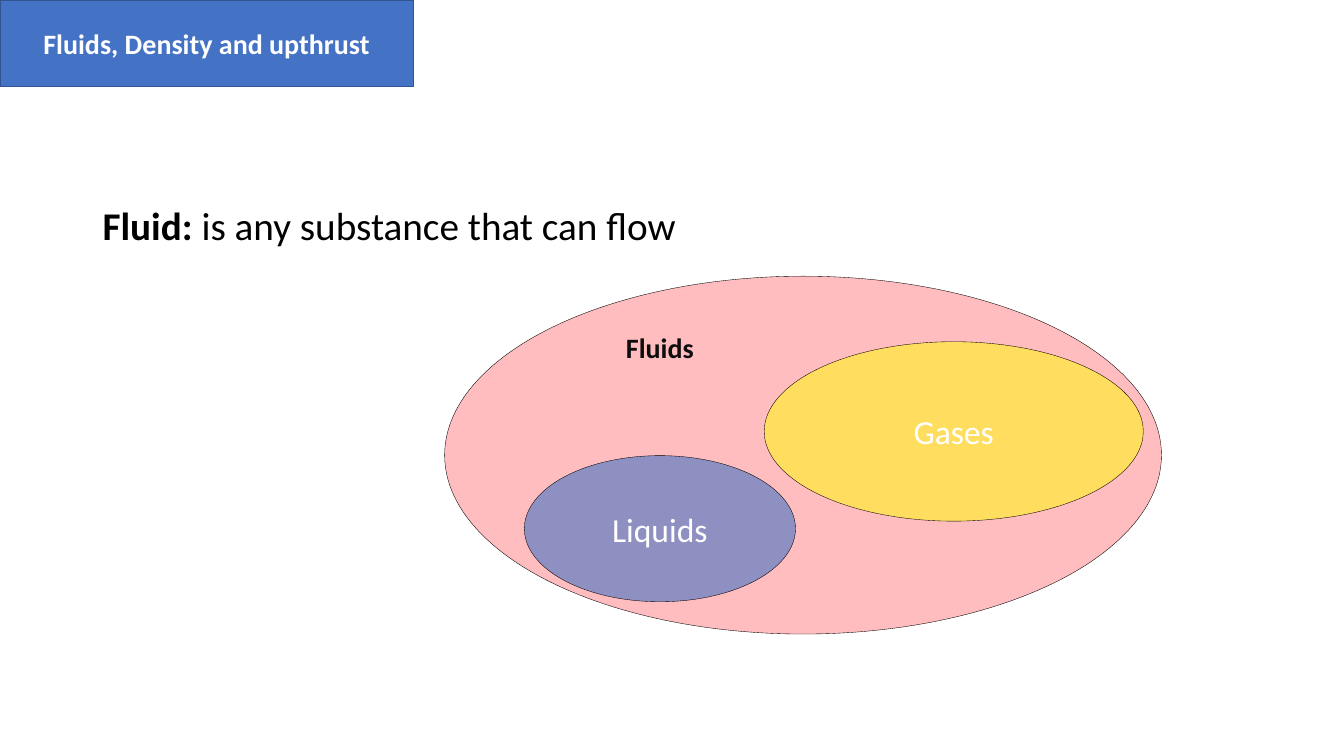
from dataclasses import dataclass

from lxml import etree
from pptx import Presentation
from pptx.dml.color import RGBColor
from pptx.enum.shapes import MSO_SHAPE
from pptx.enum.text import MSO_ANCHOR, MSO_AUTO_SIZE, PP_ALIGN
from pptx.oxml.ns import qn
from pptx.util import Inches, Pt

ELLIPSE = MSO_SHAPE.OVAL
CENTER, LEFT = PP_ALIGN.CENTER, PP_ALIGN.LEFT
MIDDLE, TOP = MSO_ANCHOR.MIDDLE, MSO_ANCHOR.TOP
NO_AUTOFIT = MSO_AUTO_SIZE.NONE
TITLE_ONLY = 5


@dataclass(frozen=True)
class Theme:
    font: str = "Calibri"
    blue: str = "4472C4"
    banner_edge: str = "325491"
    pink: str = "FF7C80"
    yellow: str = "FFFF00"
    black: str = "000000"
    near_black: str = "0D0D0D"
    white: str = "FFFFFF"
    definition_size: int = 28
    member_size: int = 24
    heading_size: int = 20


THEME = Theme()


def rgb(code):
    return RGBColor.from_string(code)


def place(shape, box):
    for side, length in zip(("left", "top", "width", "height"), box):
        setattr(shape, side, Inches(length))


def paint(shape, fill, edge, edge_width, opacity=100):
    """Fill and outline a shape; opacity is a percentage."""
    shape.fill.solid()
    shape.fill.fore_color.rgb = rgb(fill)
    if opacity < 100:
        color = shape.fill._xPr.find(qn("a:solidFill"))[0]
        etree.SubElement(color, qn("a:alpha"), val=str(opacity * 1000))
    shape.line.color.rgb = rgb(edge)
    shape.line.width = Pt(edge_width)


def write(shape, runs, size, color, align=LEFT, anchor=TOP):
    """Write one paragraph of (text, bold) runs and return it."""
    frame = shape.text_frame
    frame_format = {"word_wrap": True, "auto_size": NO_AUTOFIT, "vertical_anchor": anchor}
    for name, value in frame_format.items():
        setattr(frame, name, value)
    paragraph = frame.paragraphs[0]
    paragraph.alignment = align
    for text, bold in runs:
        run = paragraph.add_run()
        run.text = text
        for name, value in {"name": THEME.font, "size": Pt(size), "bold": bold}.items():
            setattr(run.font, name, value)
        run.font.color.rgb = rgb(color)
    return paragraph


def add_banner(slide, box):
    banner = slide.shapes.title
    place(banner, box)
    paint(banner, THEME.blue, THEME.banner_edge, 1)
    write(banner, [("Fluids, Density and upthrust", True)],
          THEME.heading_size, THEME.white, CENTER, MIDDLE)


def add_definition(slide, box):
    definition = slide.shapes.add_textbox(*map(Inches, box))
    sentence = write(definition,
                     [("Fluid: ", True), ("is any substance that can flow", False)],
                     THEME.definition_size, THEME.black)
    sentence.line_spacing = 0.9
    sentence.space_before = Pt(10)


def add_set(slide, box, fill, opacity):
    ellipse = slide.shapes.add_shape(ELLIPSE, *map(Inches, box))
    ellipse.shadow.inherit = False
    paint(ellipse, fill, THEME.black, 0.25, opacity)
    return ellipse


def add_fluids_diagram(slide, box):
    """Draw the set of fluids in the box, with its two subsets inside it."""
    left, top, _, _ = box
    add_set(slide, box, THEME.pink, 50)
    members = [
        ("Gases", (3.17, 0.65, 3.76, 1.78), THEME.yellow, 50),
        ("Liquids", (0.79, 1.78, 2.69, 1.45), THEME.blue, 60),
    ]
    for name, (dx, dy, width, height), fill, opacity in members:
        member = add_set(slide, (left + dx, top + dy, width, height), fill, opacity)
        write(member, [(name, False)], THEME.member_size, THEME.white, CENTER, MIDDLE)

    fluids_label = slide.shapes.add_textbox(
        *map(Inches, (left + 1.7, top + 0.49, 1.55, 0.44)))
    write(fluids_label, [("Fluids", True)], THEME.heading_size, THEME.near_black)


def main():
    deck = Presentation()
    deck.slide_width, deck.slide_height = Inches(13.33), Inches(7.5)
    slide = deck.slides.add_slide(deck.slide_layouts[TITLE_ONLY])
    add_definition(slide, (0.92, 2, 11.5, 4.76))
    add_banner(slide, (0, 0, 4.1, 0.86))
    add_fluids_diagram(slide, (4.41, 2.74, 7.11, 3.55))
    deck.save("out.pptx")


if __name__ == "__main__":
    main()
